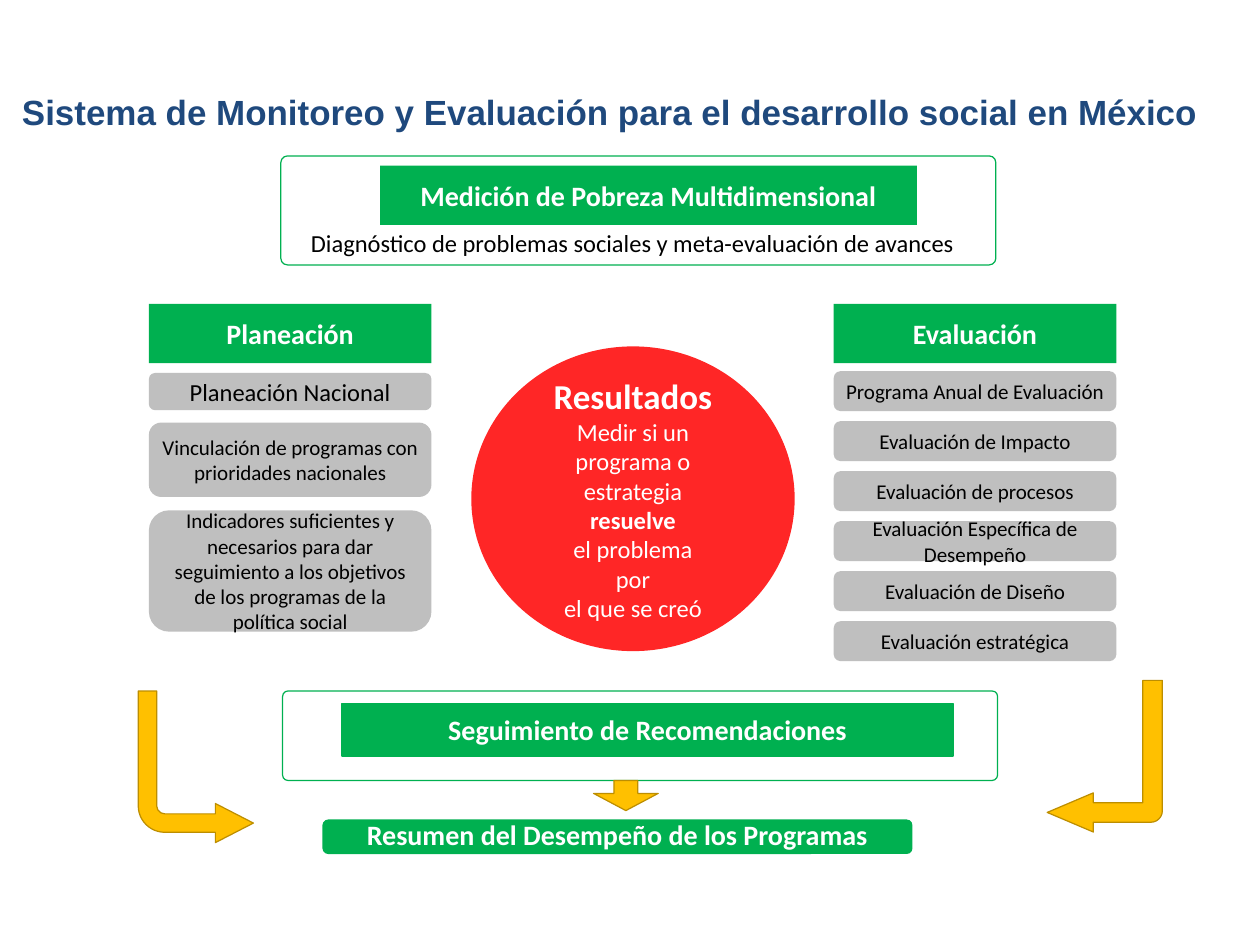
from lxml.etree import SubElement
from pptx import Presentation
from pptx.dml.color import RGBColor
from pptx.enum.shapes import MSO_SHAPE as SHAPE
from pptx.enum.text import MSO_ANCHOR as ANCHOR, PP_ALIGN as ALIGN
from pptx.oxml.ns import qn
from pptx.util import Inches, Pt

COLORS = {"green": "00B050", "red": "FF0000", "gray": "BFBFBF", "amber": "FFC000",
          "bronze": "BD8E00", "navy": "1F497D", "white": "FFFFFF", "black": "000000"}
COLS, ROWS = 128, 96

HEAD = {"size": Pt(22.8), "bold": True}
BIG = {"size": Pt(28.4), "bold": True}
BODY = {"size": Pt(19.9), "bold": False}
STRONG = {"size": Pt(19.9), "bold": True}
SMALL = {"size": Pt(17.1), "bold": False}


class Diagram:
    def __init__(self, prs):
        self.cell_w, self.cell_h = prs.slide_width / COLS, prs.slide_height / ROWS
        self.s = prs.slides.add_slide(prs.slide_layouts[6])

    def place(self, col, row, cols, rows):
        """Turn grid cells into slide lengths."""
        return [int(n * unit) for n, unit in zip(
            (col, row, cols, rows), (self.cell_w, self.cell_h) * 2)]

    def color(self, name):
        return RGBColor.from_string(COLORS[name])

    def label(self, sp, lines, color, font="Calibri", align=ALIGN.CENTER):
        """Fill a shape with (text, format) lines, one paragraph each."""
        tf = sp.text_frame
        tf.word_wrap = True
        for i, (text, style) in enumerate(lines):
            p = tf.add_paragraph() if i else tf.paragraphs[0]
            p.alignment = align
            r = p.add_run()
            r.text = text
            r.font.name = font
            r.font.color.rgb = self.color(color)
            for key, value in style.items():
                setattr(r.font, key, value)
        return tf

    def shape(self, kind, at, fill, line=None, width=1, adj=()):
        sp = self.s.shapes.add_shape(kind, *self.place(*at))
        sp.shadow.inherit = False
        sp.fill.solid()
        sp.fill.fore_color.rgb = self.color(fill)
        if line:
            sp.line.color.rgb = self.color(line)
            sp.line.width = Pt(width)
        else:
            sp.line.fill.background()
        for i, value in enumerate(adj):
            sp.adjustments[i] = value
        return sp

    def text(self, at, text, style, color, **kw):
        sp = self.s.shapes.add_textbox(*self.place(*at))
        self.label(sp, [(text, style)], color, **kw)

    def frame(self, *at):
        self.shape(SHAPE.ROUNDED_RECTANGLE, at, "white", "green", adj=[0.06])

    def banner(self, at, text, kind=SHAPE.RECTANGLE, line=None):
        sp = self.shape(kind, at, "green", line, 1.5)
        return self.label(sp, [(text, HEAD)], "white")

    def card(self, at, text, style=SMALL):
        sp = self.shape(SHAPE.ROUNDED_RECTANGLE, at, "gray")
        self.label(sp, [(text, style)], "black")

    def arrow(self, kind, at, adj, rotation=0, mirror=False):
        sp = self.shape(kind, at, "amber", "bronze", adj=adj)
        sp.rotation = rotation
        if mirror:
            sp.element.spPr.find(qn("a:xfrm")).set("flipH", "1")

    def disc(self, at, lines, opacity):
        sp = self.shape(SHAPE.OVAL, at, "red")
        rgb = sp.element.spPr.find(qn("a:solidFill"))[0]
        SubElement(rgb, qn("a:alpha")).set("val", str(opacity * 1000))
        self.label(sp, lines, "white")


def main():
    prs = Presentation()
    prs.slide_width, prs.slide_height = Inches(14.22), Inches(10.67)
    d = Diagram(prs)

    d.text((1.35, 8.73, 125, 5.22),
           "Sistema de Monitoreo y Evaluación para el desarrollo social en México",
           BIG, "navy", font="Arial", align=ALIGN.LEFT)

    d.frame(28.53, 15.84, 72.63, 11.07)
    d.text((27.45, 22.68, 73.62, 3.96),
           "Diagnóstico de problemas sociales y meta-evaluación de avances", BODY, "black")
    d.banner((38.61, 16.83, 54.54, 6.03), "Medición de Pobreza Multidimensional")

    left, right, width = 15.12, 84.7, 28.71
    for col, text in ((left, "Planeación"), (right, "Evaluación")):
        d.banner((col, 30.87, width, 6.03), text)

    for row, rows, text, style in (
            (37.89, 3.78, "Planeación Nacional", BODY),
            (42.93, 7.56, "Vinculación de programas con prioridades nacionales", SMALL),
            (51.84, 12.33, "Indicadores suficientes y necesarios para dar seguimiento a los "
             "objetivos de los programas de la política social", SMALL)):
        d.card((left, row, width, rows), text, style)

    for i, text in enumerate((
            "Programa Anual de Evaluación", "Evaluación de Impacto",
            "Evaluación de procesos", "Evaluación Específica de Desempeño",
            "Evaluación de Diseño", "Evaluación estratégica")):
        d.card((right, 37.71 + 5.08 * i, width, 4.05), text)

    d.disc((47.88, 35.19, 32.85, 30.96), [
        ("Resultados", BIG), ("Medir si un programa o estrategia", BODY),
        ("resuelve", STRONG), ("el problema", BODY), ("por", BODY),
        ("el que se creó", BODY)], opacity=85)

    d.frame(28.71, 70.2, 72.63, 9.09)
    d.banner((34.74, 71.46, 62.1, 5.31), "Seguimiento de Recomendaciones", line="green")

    d.arrow(SHAPE.BENT_ARROW, (106.38, 69.12, 11.7, 15.4), (0.17, 0.17, 0.4, 0.1), 180)
    d.arrow(SHAPE.BENT_ARROW, (14.04, 70.2, 11.7, 15.4), (0.16, 0.17, 0.33, 0.23), 180, True)
    d.arrow(SHAPE.DOWN_ARROW, (60.3, 79.29, 6.57, 3.06), (0.37, 0.57))

    tf = d.banner((32.76, 83.25, 59.94, 3.51), "Resumen del Desempeño de los Programas",
                  SHAPE.ROUNDED_RECTANGLE)
    tf.vertical_anchor = ANCHOR.MIDDLE
    tf.paragraphs[0].line_spacing = 0.9
    for side in ("left", "top", "right", "bottom"):
        setattr(tf, f"margin_{side}", Inches(0.21))

    prs.save("out.pptx")


if __name__ == "__main__":
    main()
